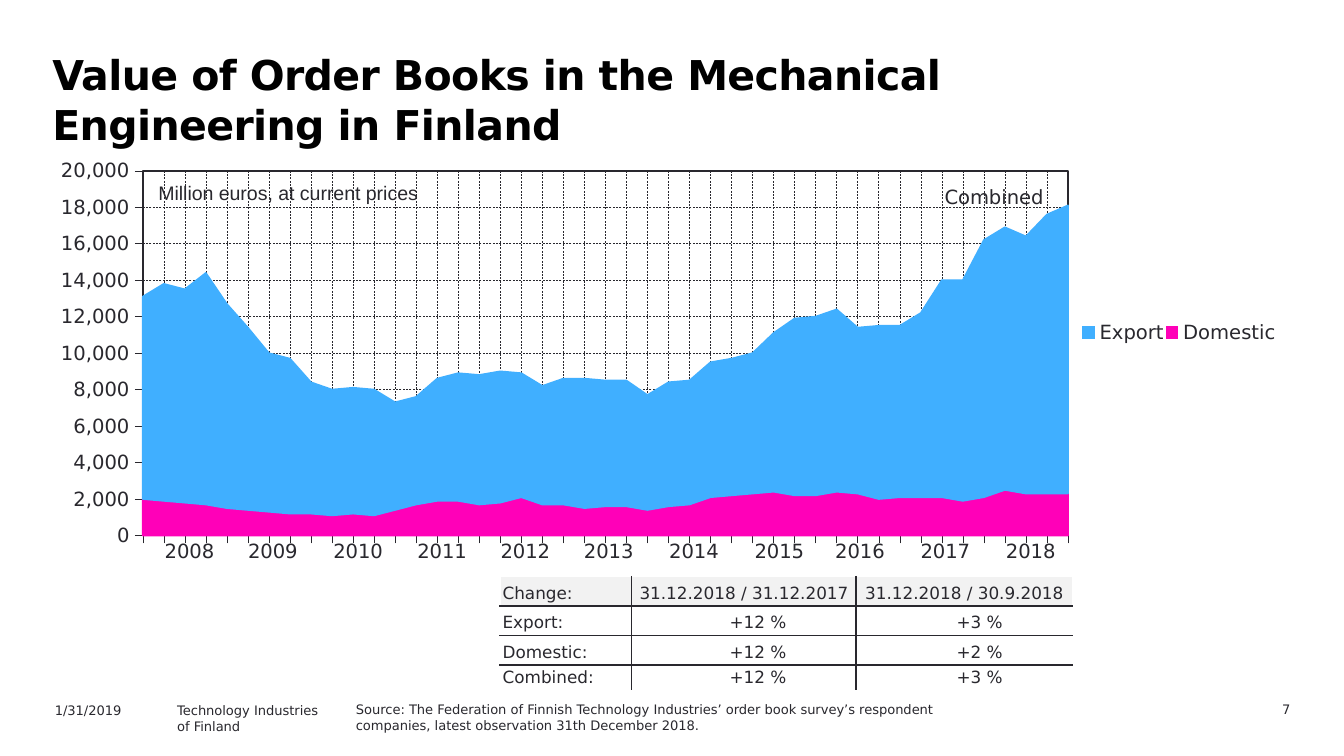
from lxml.etree import SubElement
from pptx import Presentation
from pptx.chart.data import CategoryChartData
from pptx.dml.color import RGBColor
from pptx.enum.chart import XL_CHART_TYPE, XL_LEGEND_POSITION, XL_TICK_LABEL_POSITION, XL_TICK_MARK
from pptx.enum.dml import MSO_LINE
from pptx.enum.text import MSO_ANCHOR, PP_ALIGN
from pptx.oxml import parse_xml
from pptx.oxml.ns import nsdecls, qn
from pptx.util import Inches, Pt

COLORS = {"text": "29282E", "title": "000000", "white": "FFFFFF", "header": "F2F2F2",
          "Domestic": "FF00B8", "Export": "40AFFF"}
NO_STYLE = "{2D5ABB26-0587-4C30-8999-92F81FD0307C}"

DOMESTIC = [2000, 1900, 1800, 1700, 1500, 1400, 1300, 1200, 1200, 1100, 1200, 1100, 1400, 1700, 1900,
            1900, 1700, 1800, 2100, 1700, 1700, 1500, 1600, 1600, 1400, 1600, 1700, 2100, 2200, 2300,
            2400, 2200, 2200, 2400, 2300, 2000, 2100, 2100, 2100, 1900, 2100, 2500, 2300, 2300, 2300]
EXPORT = [11100, 11900, 11700, 12700, 11200, 10000, 8700, 8500, 7200, 6900, 6900, 6900, 5900, 5900, 6700,
          7000, 7100, 7200, 6800, 6500, 6900, 7100, 6900, 6900, 6300, 6800, 6800, 7400, 7500, 7700,
          8700, 9700, 9800, 10000, 9100, 9500, 9400, 10100, 11900, 12100, 14100, 14400, 14100, 15300, 15800]
YEAR_WIDTHS = [0.62, 0.62, 0.65, 0.6, 0.64, 0.6, 0.67, 0.6, 0.6, 0.67, 0.6]
CHANGES = [["Change:", "31.12.2018 / 31.12.2017", "31.12.2018 / 30.9.2018"],
           ["Export:", "+12 %", "+3 %"],
           ["Domestic:", "+12 %", "+2 %"],
           ["Combined:", "+12 %", "+3 %"]]


def rgb(name):
    return RGBColor.from_string(COLORS[name])


def manual_layout(x, y, w, h, inner=False):
    """Return a c:layout element; lengths are fractions of the chart."""
    target = '<c:layoutTarget val="inner"/>' if inner else ""
    sizes = "".join(f'<c:{k} val="{v}"/>' for k, v in zip("xywh", (x, y, w, h)))
    return parse_xml(f'<c:layout {nsdecls("c")}><c:manualLayout>{target}<c:xMode val="edge"/>'
                     f'<c:yMode val="edge"/>{sizes}</c:manualLayout></c:layout>')


class SlideBuilder:
    font = "DejaVu Sans"

    def __init__(self, slide):
        self.s = slide

    def style(self, font, size, color="text", **extra):
        values = {"name": self.font, "size": Pt(size), "bold": False, **extra}
        for key, value in values.items():
            setattr(font, key, value)
        font.color.rgb = rgb(color)

    def line(self, line, width, color="text", dash=None):
        line.color.rgb = rgb(color)
        line.width = Pt(width)
        if dash:
            line.dash_style = dash

    def text(self, box, lines, size, color="text", align=PP_ALIGN.LEFT, wrap=True, spacing=None, **extra):
        tf = self.s.shapes.add_textbox(*map(Inches, box)).text_frame
        tf.word_wrap = wrap
        for i, line in enumerate(lines):
            p = tf.paragraphs[0] if i == 0 else tf.add_paragraph()
            p.alignment = align
            if spacing:
                p.line_spacing = Pt(spacing)
            r = p.add_run()
            r.text = line
            self.style(r.font, size, color, **extra)
        return tf

    def axis(self, axis):
        axis.major_tick_mark = XL_TICK_MARK.OUTSIDE
        axis.minor_tick_mark = XL_TICK_MARK.NONE
        axis.has_major_gridlines = True
        self.line(axis.format.line, 0.22)
        self.line(axis.major_gridlines.format.line, 0.25, dash=MSO_LINE.DASH)
        self.style(axis.tick_labels.font, 10.5)

    def area_chart(self, box, series, plot, legend):
        data = CategoryChartData(number_format="#,##0")
        data.categories = [str(i + 1) for i in range(len(DOMESTIC))]
        for name, values in series.items():
            data.add_series(name, values)
        chart = self.s.shapes.add_chart(XL_CHART_TYPE.AREA_STACKED, *map(Inches, box), data).chart
        self.style(chart.font, 10.5)
        chart.has_title = False
        chart.plots[0].vary_by_categories = False
        for ser in chart.plots[0].series:
            ser.format.fill.solid()
            ser.format.fill.fore_color.rgb = rgb(ser.name)
            self.line(ser.format.line, 0.88, ser.name)

        self.axis(chart.category_axis)
        chart.category_axis.tick_label_position = XL_TICK_LABEL_POSITION.NONE
        value_axis = chart.value_axis
        self.axis(value_axis)
        for key, value in {"minimum_scale": 0, "maximum_scale": 20000, "major_unit": 2000}.items():
            setattr(value_axis, key, value)
        value_axis.tick_labels.number_format = "#,##0"
        value_axis.tick_labels.number_format_is_linked = False

        chart.has_legend = True
        chart.legend.position = XL_LEGEND_POSITION.RIGHT
        chart.legend.include_in_layout = False
        self.style(chart.legend.font, 10.5)

        area = chart.element.find(".//" + qn("c:plotArea"))
        for old in area.findall(qn("c:layout")):
            area.remove(old)
        area.insert(0, manual_layout(*plot, inner=True))
        area.append(parse_xml(
            f'<c:spPr {nsdecls("c", "a")}><a:noFill/><a:ln w="12700"><a:solidFill>'
            f'<a:srgbClr val="{COLORS["text"]}"/></a:solidFill></a:ln></c:spPr>'))
        leg = chart.element.find(".//" + qn("c:legend"))
        for old in leg.findall(qn("c:layout")):
            leg.remove(old)
        leg.find(qn("c:legendPos")).addnext(manual_layout(*legend))

    def table(self, box, widths, heights):
        """Add a plain table without a built-in style."""
        frame = self.s.shapes.add_table(len(heights), len(widths), *map(Inches, box))
        tbl = frame.table
        tbl.first_row = tbl.horz_banding = False
        frame.element.find(".//" + qn("a:tableStyleId")).text = NO_STYLE
        for col, width in zip(tbl.columns, widths):
            col.width = Inches(width)
        for row, height in zip(tbl.rows, heights):
            row.height = Inches(height)
        return tbl

    def cell(self, cell, text, size, align, fill=None, margins=(0.1, 0.05, 0.1, 0.05), anchor=MSO_ANCHOR.TOP):
        sides = ("left", "top", "right", "bottom")
        for side, margin in zip(sides, margins):
            setattr(cell, f"margin_{side}", Inches(margin))
        cell.vertical_anchor = anchor
        p = cell.text_frame.paragraphs[0]
        p.alignment = align
        r = p.add_run()
        r.text = text
        self.style(r.font, size)
        if fill:
            cell.fill.solid()
            cell.fill.fore_color.rgb = rgb(fill)
        else:
            cell.fill.background()

    def borders(self, cell, colors):
        """Set 1 pt borders; colors go left, right, top, bottom."""
        pr = cell._tc.get_or_add_tcPr()
        for i, (side, color) in enumerate(zip("LRTB", colors)):
            ln = parse_xml(f'<a:ln{side} {nsdecls("a")} w="12700"/>')
            SubElement(SubElement(ln, qn("a:solidFill")), qn("a:srgbClr")).set("val", COLORS[color])
            pr.insert(i, ln)

    def change_table(self):
        tbl = self.table((3.72, 4.29, 4.27, 0.84), [0.98, 1.67, 1.61], [0.22, 0.22, 0.22, 0.18])
        last_row, last_col = len(CHANGES) - 1, len(CHANGES[0]) - 1
        for i, row in enumerate(CHANGES):
            for j, text in enumerate(row):
                number = i > 0 and j > 0
                align = PP_ALIGN.RIGHT if number else PP_ALIGN.CENTER if j else PP_ALIGN.LEFT
                margins = (0.02, 0.02, 0.52 if number else 0.02, 0.02)
                fill = {0: "header", last_row: "white"}.get(i)
                cell = tbl.cell(i, j)
                self.cell(cell, text, 9, align, fill, margins, MSO_ANCHOR.BOTTOM)
                outer = (j == 0, j == last_col, i == 0, i == last_row)
                self.borders(cell, ["white" if edge else "text" for edge in outer])

    def year_table(self):
        tbl = self.table((1.1, 3.97, 6.89, 0.32), YEAR_WIDTHS, [0.32])
        for j in range(len(YEAR_WIDTHS)):
            self.cell(tbl.cell(0, j), str(2008 + j), 10.5, PP_ALIGN.CENTER)


def main():
    prs = Presentation()
    prs.slide_width = Inches(10)
    prs.slide_height = prs.slide_width * 9 // 16
    b = SlideBuilder(prs.slides.add_slide(prs.slide_layouts[6]))

    title = b.text((0.28, 0.31, 8.74, 0.71), ["Value of Order Books in the Mechanical Engineering in Finland"],
                   22, "title", spacing=27, bold=True)
    title.margin_left = Inches(0.11)
    title.paragraphs[0].runs[0].font._element.set("spc", "-30")
    b.text((8.76, 5.17, 0.94, 0.18), ["7"], 7, align=PP_ALIGN.RIGHT)
    b.area_chart((0.42, 1.18, 9.18, 3.05), {"Domestic": DOMESTIC, "Export": EXPORT},
                 plot=(0.07, 0.03, 0.75, 0.89), legend=(0.83, 0.38, 0.16, 0.09))
    b.text((1.08, 1.3, 2.21, 0.27), ["Million euros, at current prices"], 10.5, wrap=False, name="Arial")
    b.change_table()
    b.text((6.93, 1.33, 1.06, 0.27), ["Combined"], 10.5)
    b.year_table()
    b.text((0.31, 5.18, 1, 0.18), ["1/31/2019"], 7)
    b.text((1.22, 5.18, 1.8, 0.18), ["Technology Industries", "of Finland"], 7)
    b.text((2.55, 5.17, 5.07, 0.18),
           ["Source: The Federation of Finnish Technology Industries’ order book survey’s respondent "
            "companies, latest observation 31th December 2018."], 7)
    prs.save("out.pptx")


if __name__ == "__main__":
    main()
